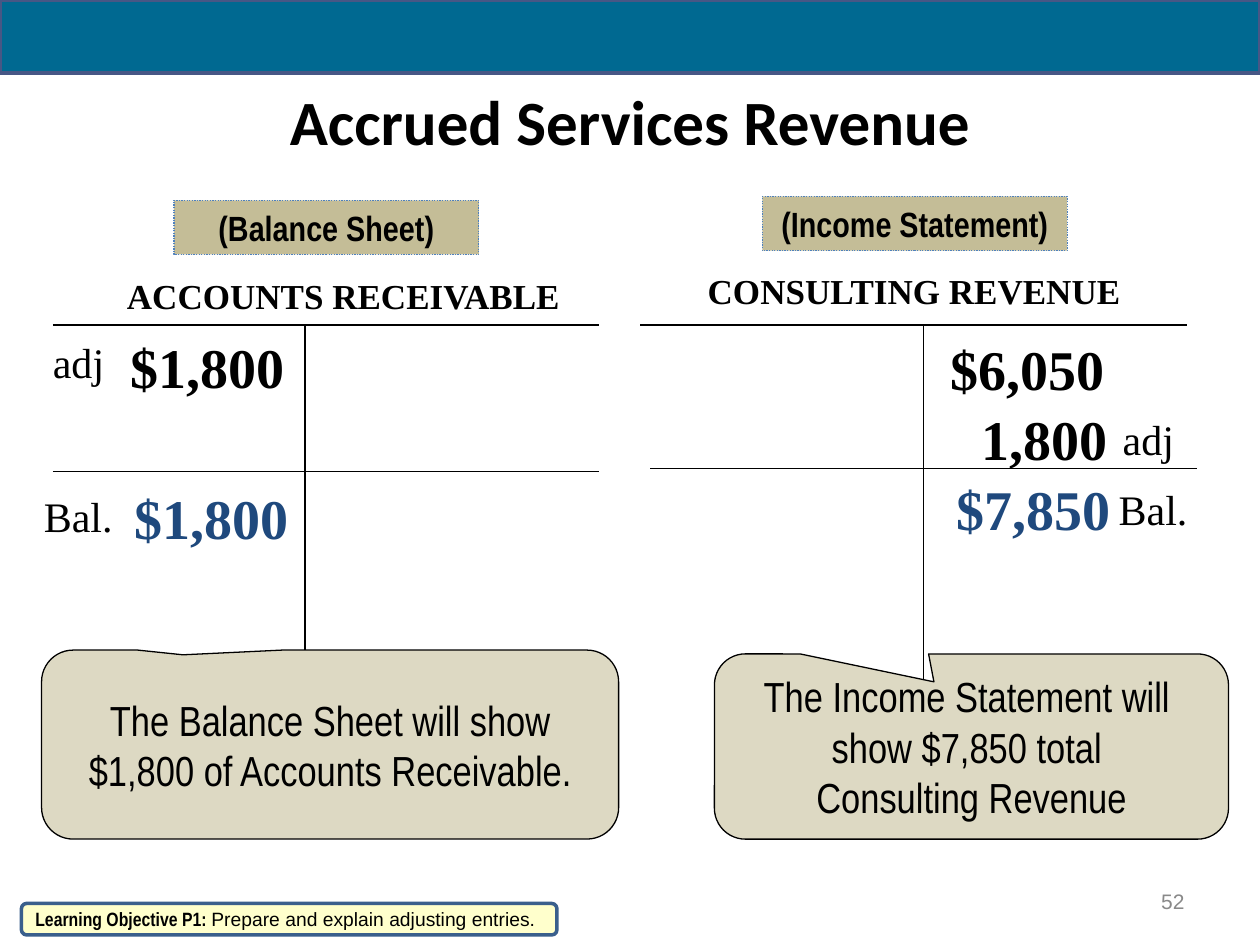
import pptx
import pptx.util
import pptx.dml.color
import pptx.enum.dml
import pptx.enum.shapes
import pptx.enum.text
import pptx.oxml.ns
from dataclasses import dataclass
from lxml import etree

Inches = pptx.util.Inches
Pt = pptx.util.Pt
Kind = pptx.enum.shapes.MSO_SHAPE
Align = pptx.enum.text.PP_ALIGN
Anchor = pptx.enum.text.MSO_ANCHOR
qn = pptx.oxml.ns.qn


@dataclass(frozen=True)
class Theme:
    serif: str = "Times New Roman"
    narrow: str = "Arial Narrow"
    sans: str = "Arial"
    head: str = "Calibri"
    black: str = "000000"
    navy: str = "1F497D"
    gray: str = "898989"
    teal: str = "006991"
    tan: str = "C4BD97"
    sand: str = "DDD9C3"
    cream: str = "FFFFCC"
    blue: str = "4F81BD"
    slate: str = "475785"
    steel: str = "3A5F8C"
    title: int = 36
    sum: int = 32
    body: int = 24
    label: int = 20
    page: int = 12
    note: int = 11
    thin: float = 0.75


def tint(text):
    return pptx.dml.color.RGBColor.from_string(text)


class Page:
    def __init__(self, slide, theme):
        self.slide = slide
        self.theme = theme

    def run(self, para, text, size, font=None, color=None, bold=False):
        run = para.add_run()
        run.text = text
        run.font.size = Pt(size)
        run.font.name = font or self.theme.serif
        run.font.bold = bold
        run.font.color.rgb = tint(color or self.theme.black)

    def fill_text(self, shape, paras, align, anchor, lead=False, wrap=True):
        """Write paragraphs, each a list of runs; None breaks the line."""
        frame = shape.text_frame
        frame.word_wrap = wrap
        frame.vertical_anchor = anchor
        for i, runs in enumerate(paras):
            para = frame.add_paragraph() if i else frame.paragraphs[0]
            para.alignment = align
            if lead:
                gap = etree.SubElement(para._p.get_or_add_pPr(), qn("a:spcBef"))
                etree.SubElement(gap, qn("a:spcPct"), val="50000")
            for run in runs:
                if run is None:
                    para.add_line_break()
                else:
                    self.run(para, *run)

    def text(self, box, runs, align=Align.LEFT, anchor=Anchor.TOP, lead=True):
        shape = self.slide.shapes.add_textbox(*map(Inches, box))
        self.fill_text(shape, [runs], align, anchor, lead)

    def shape(self, kind, box, fill, line, width):
        shape = self.slide.shapes.add_shape(kind, *map(Inches, box))
        shape.shadow.inherit = False
        shape.fill.solid()
        shape.fill.fore_color.rgb = tint(fill)
        shape.line.color.rgb = tint(line)
        shape.line.width = Pt(width)
        return shape

    def line(self, *ends):
        link = self.slide.shapes.add_connector(
            pptx.enum.shapes.MSO_CONNECTOR.STRAIGHT, *map(Inches, ends))
        link.line.color.rgb = tint(self.theme.black)
        link.line.width = Pt(self.theme.thin)
        etree.SubElement(link._element.spPr, qn("a:effectLst"))

    def name(self, box, text):
        self.text(box, [(text, self.theme.label, None, None, True)], Align.CENTER)

    def sum(self, box, text, color=None, align=Align.LEFT):
        self.text(box, [(text, self.theme.sum, None, color, True)], align)

    def adj(self, left, top):
        self.text((left, top, 0.88, 0.64),
                  [(" ", self.theme.sum, None, None, True), ("adj", self.theme.body)])

    def bal(self, left, top):
        self.text((left, top, 0.81, 0.5), [("Bal.", self.theme.body)])

    def tag(self, left, top, text):
        t = self.theme
        shape = self.shape(Kind.RECTANGLE, (left, top, 2.42, 0.43), t.tan, t.blue, t.thin)
        shape.line.dash_style = pptx.enum.dml.MSO_LINE.ROUND_DOT
        self.fill_text(shape, [[(text, t.label, t.narrow, None, True)]],
                       Align.CENTER, Anchor.TOP, True)

    def callout(self, box, tip, paras):
        t = self.theme
        shape = self.shape(Kind.ROUNDED_RECTANGULAR_CALLOUT, box, t.sand, t.black, t.thin)
        for i, value in enumerate((*tip, 0.167)):
            shape.adjustments[i] = value
        runs = [[s and (s, t.body, t.narrow) for s in para] for para in paras]
        self.fill_text(shape, runs, Align.CENTER, Anchor.MIDDLE, wrap=False)


def main():
    deck = pptx.Presentation()
    deck.slide_width, deck.slide_height = Inches(10), Inches(7.5)
    t = Theme()
    page = Page(deck.slides.add_slide(deck.slide_layouts[6]), t)

    page.text((0.75, 0.58, 8.5, 0.75),
              [("Accrued Services Revenue", t.title, t.head, None, True)],
              Align.CENTER, Anchor.MIDDLE, False)

    # Both T accounts
    for ends in ((0.42, 2.58, 4.75, 2.58), (2.42, 2.58, 2.42, 5.5),
                 (0.42, 3.74, 4.75, 3.74), (5.08, 2.58, 9.42, 2.58),
                 (7.33, 2.59, 7.33, 5.59), (5.16, 3.72, 9.5, 3.72)):
        page.line(*ends)

    page.name((0.88, 2.13, 3.69, 0.44), "ACCOUNTS RECEIVABLE")
    page.sum((0.86, 2.59, 1.58, 0.63), "$1,800", align=Align.CENTER)
    page.adj(0.21, 2.51)
    page.bal(0.25, 3.84)
    page.sum((0.97, 3.79, 1.56, 0.64), "$1,800", t.navy)

    page.name((4.92, 2.09, 4.67, 0.44), "CONSULTING REVENUE")
    page.sum((7.26, 2.61, 1.79, 0.63), "$6,050", align=Align.CENTER)
    page.sum((7.69, 3.16, 1.25, 0.64), "1,800")
    page.adj(8.7, 3.12)
    page.sum((7.49, 3.72, 1.67, 0.63), "$7,850", t.navy)
    page.bal(8.78, 3.79)

    page.tag(1.38, 1.59, "(Balance Sheet)")
    page.tag(6.05, 1.56, "(Income Statement)")
    page.callout((0.33, 5.16, 4.58, 1.5), (-0.255, -0.475),
                 [["The Balance Sheet will show"],
                  ["$1,800 of Accounts Receivable."]])
    page.callout((5.67, 5.19, 4.08, 1.47), (-0.073, -0.349),
                 [["The Income Statement will "],
                  ["show $7,850 total ", None, "Consulting Revenue"]])

    page.shape(Kind.RECTANGLE, (0, 0, 10, 0.58), t.teal, t.slate, 2.25)
    page.text((7.17, 6.95, 2.33, 0.4), [("52", t.page, t.sans, t.gray)],
              Align.RIGHT, Anchor.MIDDLE, False)
    goal = page.shape(Kind.ROUNDED_RECTANGLE, (0.17, 7.17, 4.25, 0.25),
                      t.cream, t.steel, 2)
    page.fill_text(goal, [[("Learning Objective P1: ", t.note, t.narrow, None, True),
                           ("Prepare and explain adjusting entries.", t.note, t.sans)]],
                   Align.LEFT, Anchor.MIDDLE)
    deck.save("out.pptx")


if __name__ == "__main__":
    main()
